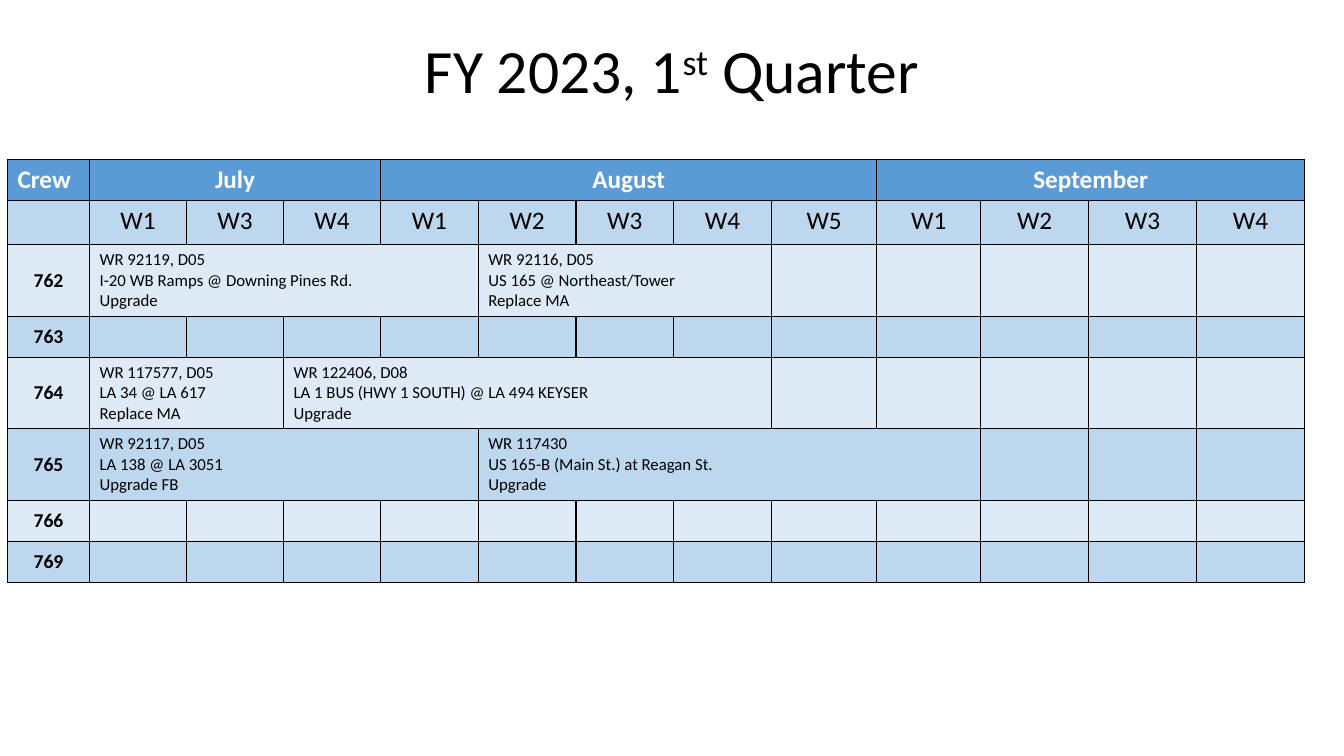
import dataclasses

import pptx
import pptx.dml.color
import pptx.enum.text
import pptx.oxml
import pptx.oxml.ns
import pptx.util

Pt = pptx.util.Pt
Align = pptx.enum.text.PP_ALIGN
Anchor = pptx.enum.text.MSO_ANCHOR


@dataclasses.dataclass(frozen=True)
class Theme:
    font: str = "Calibri"
    black: str = "000000"
    white: str = "FFFFFF"
    head: str = "5B9BD5"
    dark: str = "BDD7EE"
    light: str = "DEEBF7"
    title: float = 44
    large: float = 18
    crew: float = 14
    job: float = 12


THEME = Theme()
WIDTHS = [58.7] + [69.3] * 3 + [69.8] * 4 + [75.4, 74.2] + [77.1] * 3
MONTHS = [
    ("July", ["W1", "W3", "W4"]),
    ("August", ["W1", "W2", "W3", "W4", "W5"]),
    ("September", ["W1", "W2", "W3", "W4"]),
]
# Each job: first column, number of columns, text
CREWS = {
    "762": [
        (1, 4, "WR 92119, D05\nI-20 WB Ramps @ Downing Pines Rd.\nUpgrade"),
        (5, 3, "WR 92116, D05\nUS 165 @ Northeast/Tower\nReplace MA"),
    ],
    "763": [],
    "764": [
        (1, 2, "WR 117577, D05\nLA 34 @ LA 617\nReplace MA"),
        (3, 5, "WR 122406, D08\nLA 1 BUS (HWY 1 SOUTH) @ LA 494 KEYSER\nUpgrade"),
    ],
    "765": [
        (1, 4, "WR 92117, D05\nLA 138 @ LA 3051\nUpgrade FB"),
        (5, 5, "WR 117430\nUS 165-B (Main St.) at Reagan St.\nUpgrade"),
    ],
    "766": [],
    "769": [],
}


def rgb(code):
    return pptx.dml.color.RGBColor.from_string(code)


def style(run, size, color=THEME.black, bold=False):
    run.font.name = THEME.font
    run.font.size = Pt(size)
    run.font.bold = bold
    run.font.color.rgb = rgb(color)


def write(cell, text, size, color=THEME.black, bold=False, align=Align.CENTER):
    para = cell.text_frame.paragraphs[0]
    para.text = text
    para.alignment = align
    for run in para.runs:
        style(run, size, color, bold)


def paint(cell, color):
    """Fill a cell and rule all four of its sides."""
    cell.fill.solid()
    cell.fill.fore_color.rgb = rgb(color)
    props = cell._tc.get_or_add_tcPr()
    for i, side in enumerate("LRTB"):
        line = pptx.oxml.parse_xml(
            f'<a:ln{side} {pptx.oxml.ns.nsdecls("a")} w="{Pt(1)}"><a:solidFill>'
            f'<a:srgbClr val="{THEME.black}"/></a:solidFill></a:ln{side}>'
        )
        props.insert(i, line)


def span(grid, row, col, count):
    """Merge cells along a row and return the first."""
    cell = grid.cell(row, col)
    cell.merge(grid.cell(row, col + count - 1))
    return cell


def add_title(slide, left, top, width, height):
    title = slide.shapes.title
    title.left, title.top = Pt(left), Pt(top)
    title.width, title.height = Pt(width), Pt(height)
    title.text_frame.vertical_anchor = Anchor.MIDDLE
    para = title.text_frame.paragraphs[0]
    para.alignment = Align.CENTER
    para.line_spacing = 0.9
    for text in ("FY 2023, 1", "st", " Quarter"):
        run = para.add_run()
        run.text = text
        style(run, THEME.title)
    para.runs[1].font._element.set("baseline", "30000")


def add_head(grid):
    """Write the month row and the week row."""
    write(grid.cell(0, 0), "Crew", THEME.large, THEME.white, True, Align.LEFT)
    col = 1
    for month, weeks in MONTHS:
        cell = span(grid, 0, col, len(weeks))
        write(cell, month, THEME.large, THEME.white, True)
        for i, week in enumerate(weeks):
            write(grid.cell(1, col + i), week, THEME.large)
        col += len(weeks)


def add_crews(grid):
    for row, (crew, jobs) in enumerate(CREWS.items(), 2):
        name = grid.cell(row, 0)
        name.vertical_anchor = Anchor.MIDDLE
        write(name, crew, THEME.crew, bold=True)
        for col, count, text in jobs:
            write(span(grid, row, col, count), text, THEME.job, align=Align.LEFT)


def add_plan(slide, left, top):
    heights = [29.2, 31.7] + [51 if jobs else 29.2 for jobs in CREWS.values()]
    frame = slide.shapes.add_table(
        len(heights), len(WIDTHS), Pt(left), Pt(top), Pt(sum(WIDTHS)), Pt(sum(heights))
    )
    grid = frame.table
    for column, width in zip(grid.columns, WIDTHS):
        column.width = Pt(width)
    for i, height in enumerate(heights):
        grid.rows[i].height = Pt(height)
        color = THEME.dark if i % 2 else THEME.light
        for cell in grid.rows[i].cells:
            paint(cell, color if i else THEME.head)
    add_head(grid)
    add_crews(grid)


def main():
    deck = pptx.Presentation()
    deck.slide_width, deck.slide_height = Pt(960), Pt(540)
    slide = deck.slides.add_slide(deck.slide_layouts[5])
    add_title(slide, 66, 0.5, 828, 104.4)
    add_plan(slide, 5.3, 114)
    deck.save("out.pptx")


if __name__ == "__main__":
    main()
